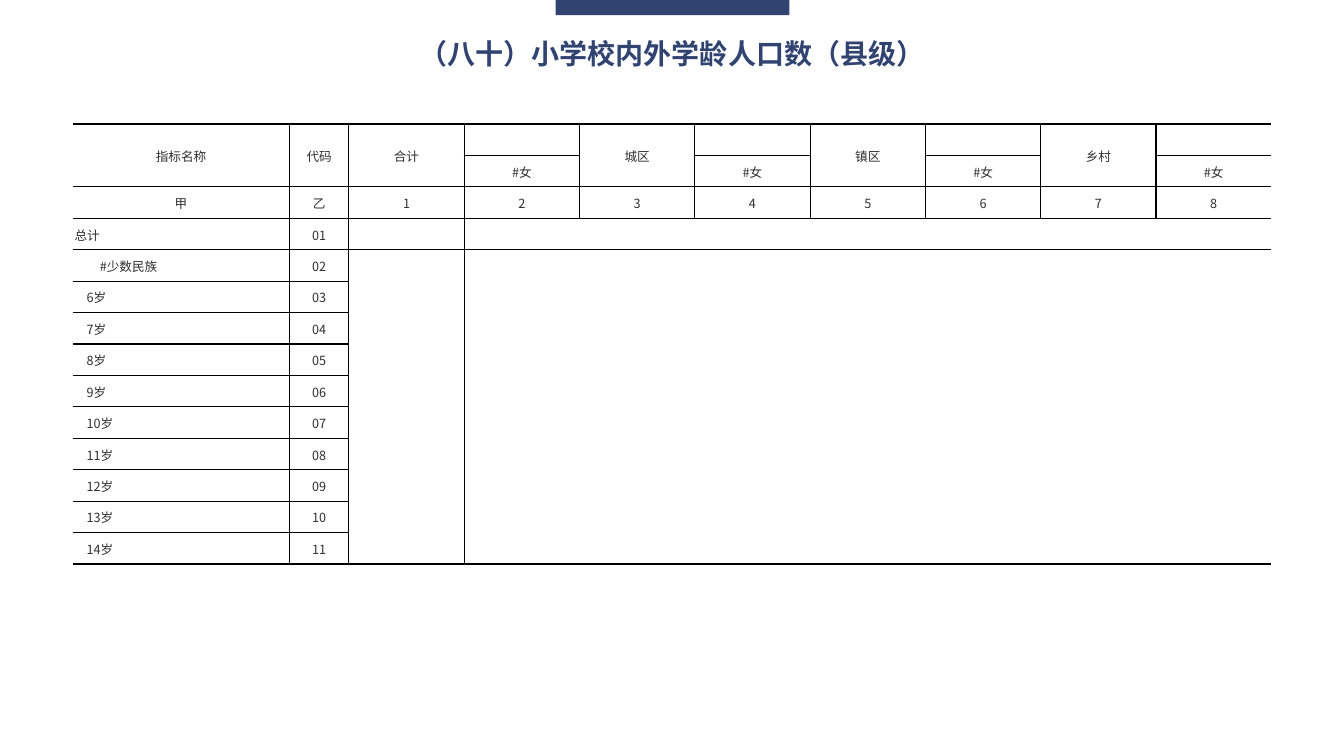
import itertools
import lxml.etree
import pptx
import pptx.dml.color
import pptx.enum.shapes
import pptx.enum.text
import pptx.oxml.ns
import pptx.util

Inches, Pt = pptx.util.Inches, pptx.util.Pt
ALIGN = pptx.enum.text.PP_ALIGN
qn = pptx.oxml.ns.qn

# Content
TITLE = "（八十）小学校内外学龄人口数（县级）"
STUB_HEADS = [("指标名称", "甲"), ("代码", "乙")]
AREAS = ["合计", "城区", "镇区", "乡村"]
FEMALE = "#女"
INDICATORS = [("总计", 0), ("#少数民族", 0.25)]  # label, first-line indent
INDICATORS += [(f"{age}岁", 0.12) for age in range(6, 15)]

COLORS = {"navy": "304371", "text": "2F2F2F", "line": "000000"}
CJK_FONT, SERIF_FONT = "Noto Sans CJK SC", "Times New Roman"
NO_STYLE = "{2D5ABB26-0587-4C30-8999-92F81FD0307C}"

# Grid
LEFT, TOP, WIDTH, HEIGHT = 0.72, 1.23, 11.89, 4.37
STUB_WIDTHS = [2.15, 0.59]
HEAD_ROWS, STUB_COLS = 3, len(STUB_WIDTHS)
ROWS = HEAD_ROWS + len(INDICATORS)
COLS = STUB_COLS + 2 * len(AREAS)


def rgb(name):
    return pptx.dml.color.RGBColor.from_string(COLORS[name])


def style_run(run, size, font, color, bold=False):
    run.font.size, run.font.name, run.font.bold = Pt(size), font, bold
    run.font.color.rgb = rgb(color)
    east_asian = lxml.etree.Element(qn("a:ea"), typeface=CJK_FONT)
    run.font._element.find(qn("a:latin")).addnext(east_asian)


def write(cell, text, align=ALIGN.CENTER, indent=0):
    paragraph = cell.text_frame.paragraphs[0]
    paragraph.alignment = align
    if indent:
        properties = paragraph._p.get_or_add_pPr()
        properties.set("marL", "0")
        properties.set("indent", str(Inches(indent)))
    for is_ascii, letters in itertools.groupby(text, str.isascii):
        run = paragraph.add_run()
        run.text = "".join(letters)
        style_run(run, 9, CJK_FONT if is_ascii else SERIF_FONT, "text")


def ruled_sides(row, col):
    """Sides of a cell that carry a line; the outer left and right stay open."""
    if row >= HEAD_ROWS and col >= STUB_COLS:
        rules = {"L": col == STUB_COLS, "T": row == HEAD_ROWS, "B": row == ROWS - 1}
    else:
        is_area = row == 0 and col >= STUB_COLS
        is_female = (col - STUB_COLS) % 2 == 1
        rules = {"L": col > 0 and not (is_area and is_female),
                 "R": col < COLS - 1 and not (is_area and not is_female),
                 "T": True, "B": True}
    return [side for side, ruled in rules.items() if ruled]


def rule_cell(cell, sides):
    properties = cell._tc.get_or_add_tcPr()
    for index, side in enumerate(sides):
        line = lxml.etree.Element(qn(f"a:ln{side}"), w=str(Pt(1)))
        fill = lxml.etree.SubElement(line, qn("a:solidFill"))
        lxml.etree.SubElement(fill, qn("a:srgbClr"), val=COLORS["line"])
        properties.insert(index, line)


def add_banner(slide):
    bar = slide.shapes.add_shape(pptx.enum.shapes.MSO_SHAPE.RECTANGLE,
                                 Inches(5.51), Inches(0), Inches(2.32), Inches(0.15))
    bar.shadow.inherit = False
    bar.fill.solid()
    bar.fill.fore_color.rgb = rgb("navy")
    bar.line.fill.background()

    title = slide.shapes.add_textbox(Inches(4.04), Inches(0.31), Inches(5.25), Inches(0.44))
    frame = title.text_frame
    frame.text = TITLE
    frame.word_wrap = False
    frame.auto_size = pptx.enum.text.MSO_AUTO_SIZE.SHAPE_TO_FIT_TEXT
    frame.paragraphs[0].alignment = ALIGN.CENTER
    style_run(frame.paragraphs[0].runs[0], 20, CJK_FONT, "navy", bold=True)


def add_form(slide):
    form = slide.shapes.add_table(ROWS, COLS, Inches(LEFT), Inches(TOP),
                                  Inches(WIDTH), Inches(HEIGHT)).table
    form.first_row = form.horz_banding = False
    form._tbl.tblPr.find(qn("a:tableStyleId")).text = NO_STYLE
    area_width = (WIDTH - sum(STUB_WIDTHS)) / (COLS - STUB_COLS)
    for col, column in enumerate(form.columns):
        column.width = Inches(STUB_WIDTHS[col] if col < STUB_COLS else area_width)
    for row in form.rows:
        row.height = Inches(HEIGHT / ROWS)

    # Two-row headings
    tall_heads = [*range(STUB_COLS), *range(STUB_COLS, COLS, 2)]
    for col in tall_heads:
        form.cell(0, col).merge(form.cell(1, col))

    # Cell format and lines
    for row, col in itertools.product(range(ROWS), range(COLS)):
        cell = form.cell(row, col)
        cell.margin_left = cell.margin_right = Inches(0.02)
        cell.margin_top = cell.margin_bottom = 0
        cell.vertical_anchor = pptx.enum.text.MSO_ANCHOR.MIDDLE
        cell.text_frame.paragraphs[0].line_spacing = Pt(14)
        cell.fill.background()
        if not cell.is_spanned:
            rule_cell(cell, ruled_sides(row, col))

    # Headings and column numbers
    for col, (heading, mark) in enumerate(STUB_HEADS):
        write(form.cell(0, col), heading)
        write(form.cell(2, col), mark)
    for index, area in enumerate(AREAS):
        col = STUB_COLS + 2 * index
        write(form.cell(0, col), area)
        write(form.cell(1, col + 1), FEMALE)
    for number, col in enumerate(range(STUB_COLS, COLS), 1):
        write(form.cell(2, col), str(number))

    # Indicators and codes
    for code, (label, indent) in enumerate(INDICATORS, 1):
        row = HEAD_ROWS + code - 1
        write(form.cell(row, 0), label, ALIGN.JUSTIFY, indent)
        write(form.cell(row, 1), f"{code:02d}")


def main():
    deck = pptx.Presentation()
    deck.slide_width, deck.slide_height = Inches(13.33), Inches(7.5)
    slide = deck.slides.add_slide(deck.slide_layouts[6])
    add_banner(slide)
    add_form(slide)
    deck.save("out.pptx")


if __name__ == "__main__":
    main()
